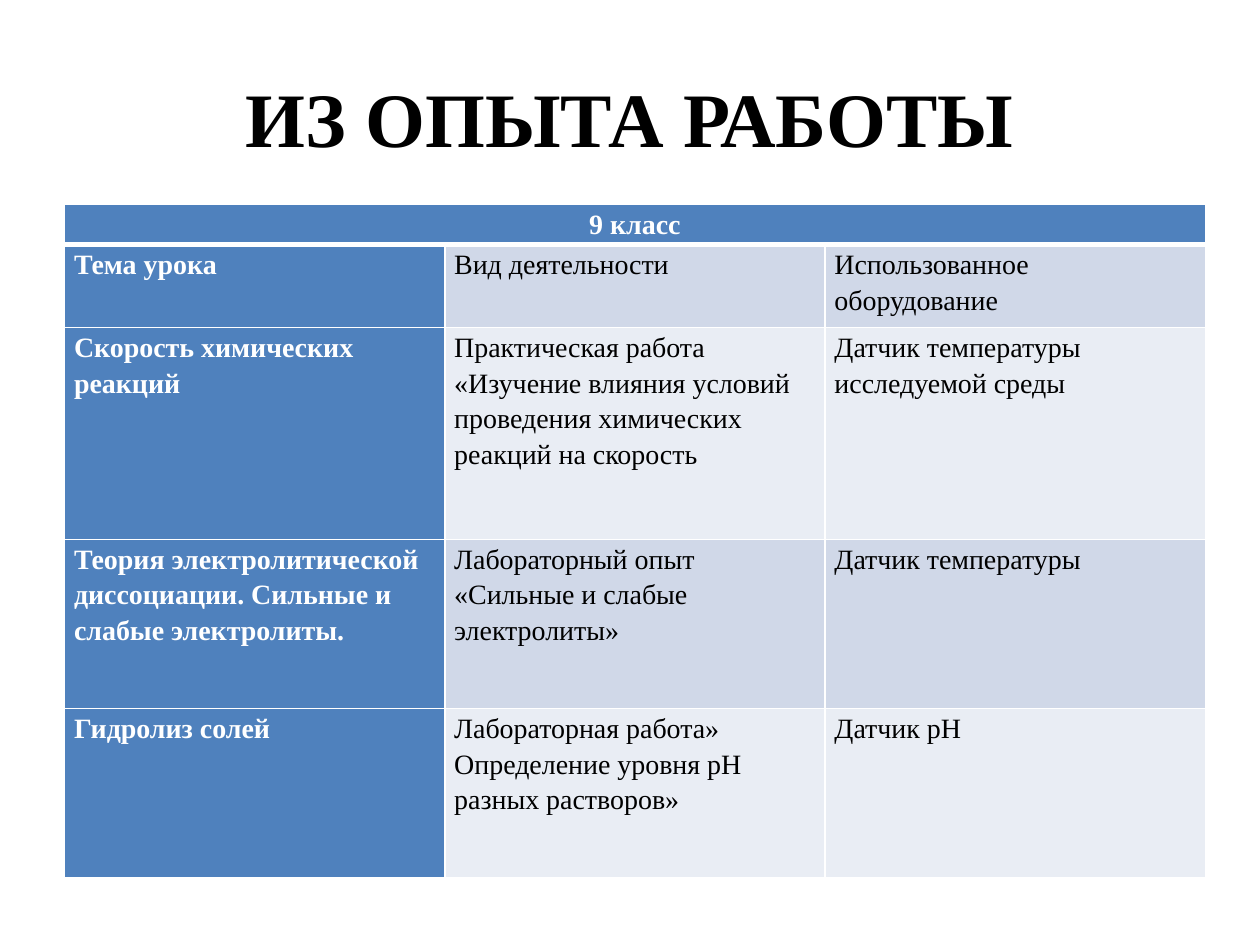
import pptx
import pptx.util
import pptx.dml.color
import pptx.enum.text
import pptx.oxml
import pptx.oxml.ns

Pt = pptx.util.Pt
ALIGN = pptx.enum.text.PP_ALIGN
ANCHOR = pptx.enum.text.MSO_ANCHOR

# Content
TITLE = "ИЗ ОПЫТА РАБОТЫ"
HEADER = "9 класс"
ROWS = [
    ("Тема урока", "Вид деятельности", "Использованное оборудование"),
    ("Скорость химических реакций",
     "Практическая работа «Изучение влияния условий проведения "
     "химических реакций на скорость",
     "Датчик температуры исследуемой среды"),
    ("Теория электролитической диссоциации. Сильные и слабые электролиты.",
     "Лабораторный опыт\n«Сильные и слабые электролиты»",
     "Датчик температуры"),
    ("Гидролиз солей",
     "Лабораторная работа» Определение уровня рН разных растворов»",
     "Датчик рН"),
]

THEME = {
    "font": "Times New Roman", "title_size": 44, "cell_size": 16,
    "text": "000000", "light": "FFFFFF", "accent": "4F81BD",
    "bands": ("D0D8E8", "E9EDF4"),
}

# Geometry in points
SLIDE_W, SLIDE_H = 720, 540
TITLE_BOX = (36, 21.6, 648, 90)
TABLE_LEFT, TABLE_TOP = 36.9, 116.8
COL_W = 217.3
ROW_H = (23, 47.5, 121, 96.7, 96.7)


def rgb(value):
    return pptx.dml.color.RGBColor.from_string(value)


def write(tf, text, *, size, color, bold=False, align=ALIGN.LEFT, spacing=1.0):
    for i, line in enumerate(text.split("\n")):
        p = tf.paragraphs[0] if i == 0 else tf.add_paragraph()
        p.alignment = align
        p.line_spacing = spacing
        r = p.add_run()
        r.text = line
        r.font.name = THEME["font"]
        r.font.size = Pt(size)
        r.font.bold = bold
        r.font.color.rgb = rgb(color)


def set_borders(cell, **widths):
    tc_pr = cell._tc.get_or_add_tcPr()
    ns = pptx.oxml.ns.nsdecls("a")
    for i, side in enumerate("LRTB"):
        width = Pt(widths.get(side, 1))
        tc_pr.insert(i, pptx.oxml.parse_xml(
            f'<a:ln{side} {ns} w="{width}"><a:solidFill>'
            f'<a:srgbClr val="{THEME["light"]}"/></a:solidFill></a:ln{side}>'))


def fill_cell(cell, text, fill, color, bold, align=ALIGN.LEFT, **borders):
    cell.margin_left = cell.margin_right = Pt(5.4)
    cell.margin_top = cell.margin_bottom = 0
    cell.vertical_anchor = ANCHOR.TOP
    cell.fill.solid()
    cell.fill.fore_color.rgb = rgb(fill)
    set_borders(cell, **borders)
    if text:
        write(cell.text_frame, text, size=THEME["cell_size"], color=color,
              bold=bold, align=align, spacing=1.15)


def add_title(s):
    sp = s.shapes.add_textbox(*map(Pt, TITLE_BOX))
    tf = sp.text_frame
    tf.word_wrap = True
    tf.vertical_anchor = ANCHOR.MIDDLE
    write(tf, TITLE, size=THEME["title_size"], color=THEME["text"],
          bold=True, align=ALIGN.CENTER)


def add_lessons(s):
    cols = len(ROWS[0])
    table = s.shapes.add_table(
        len(ROW_H), cols, Pt(TABLE_LEFT), Pt(TABLE_TOP),
        Pt(COL_W * cols), Pt(sum(ROW_H))).table
    for col in table.columns:
        col.width = Pt(COL_W)
    for row, height in zip(table.rows, ROW_H):
        row.height = Pt(height)

    # Header across all columns
    table.cell(0, 0).merge(table.cell(0, cols - 1))
    for j in range(cols):
        fill_cell(table.cell(0, j), HEADER if j == 0 else "", THEME["accent"],
                  THEME["light"], True, ALIGN.CENTER, B=3)

    # Accent first column, banded rows
    for i, row in enumerate(ROWS, start=1):
        band = THEME["bands"][(i - 1) % 2]
        for j, text in enumerate(row):
            first = j == 0
            fill_cell(table.cell(i, j), text,
                      THEME["accent"] if first else band,
                      THEME["light"] if first else THEME["text"],
                      first, T=3 if i == 1 else 1)


def main():
    prs = pptx.Presentation()
    prs.slide_width, prs.slide_height = Pt(SLIDE_W), Pt(SLIDE_H)
    s = prs.slides.add_slide(prs.slide_layouts[6])
    add_title(s)
    add_lessons(s)
    prs.save("out.pptx")


if __name__ == "__main__":
    main()
